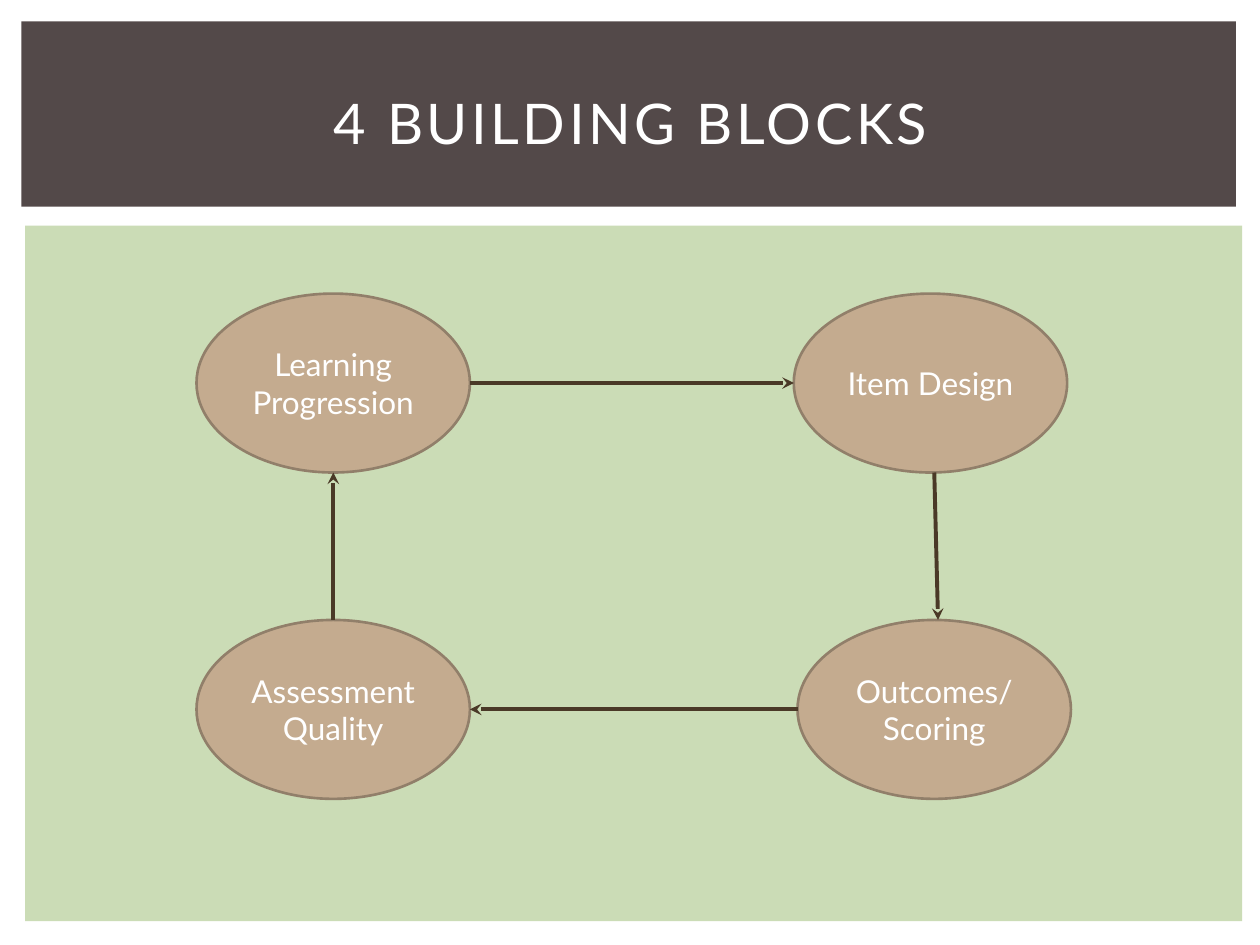
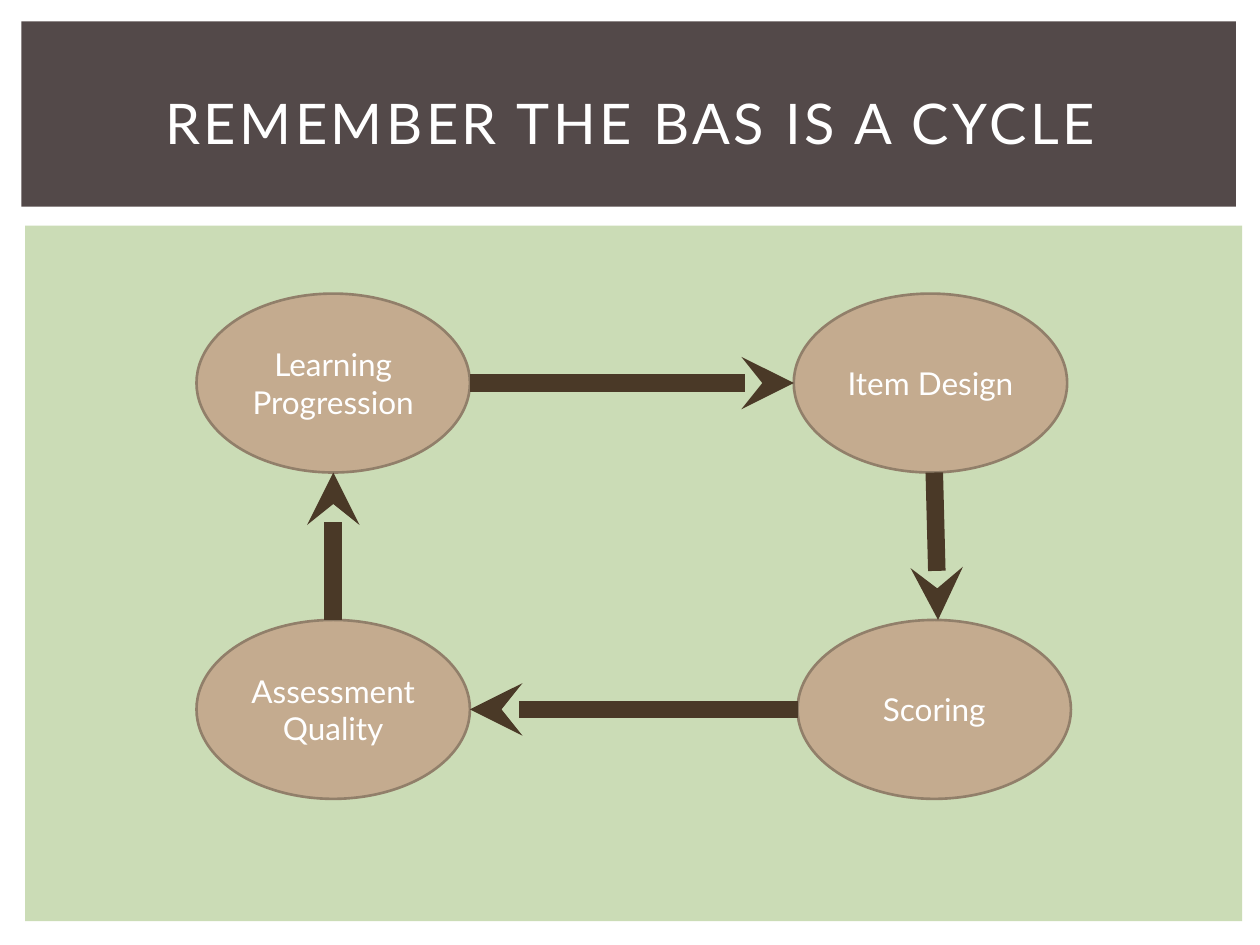
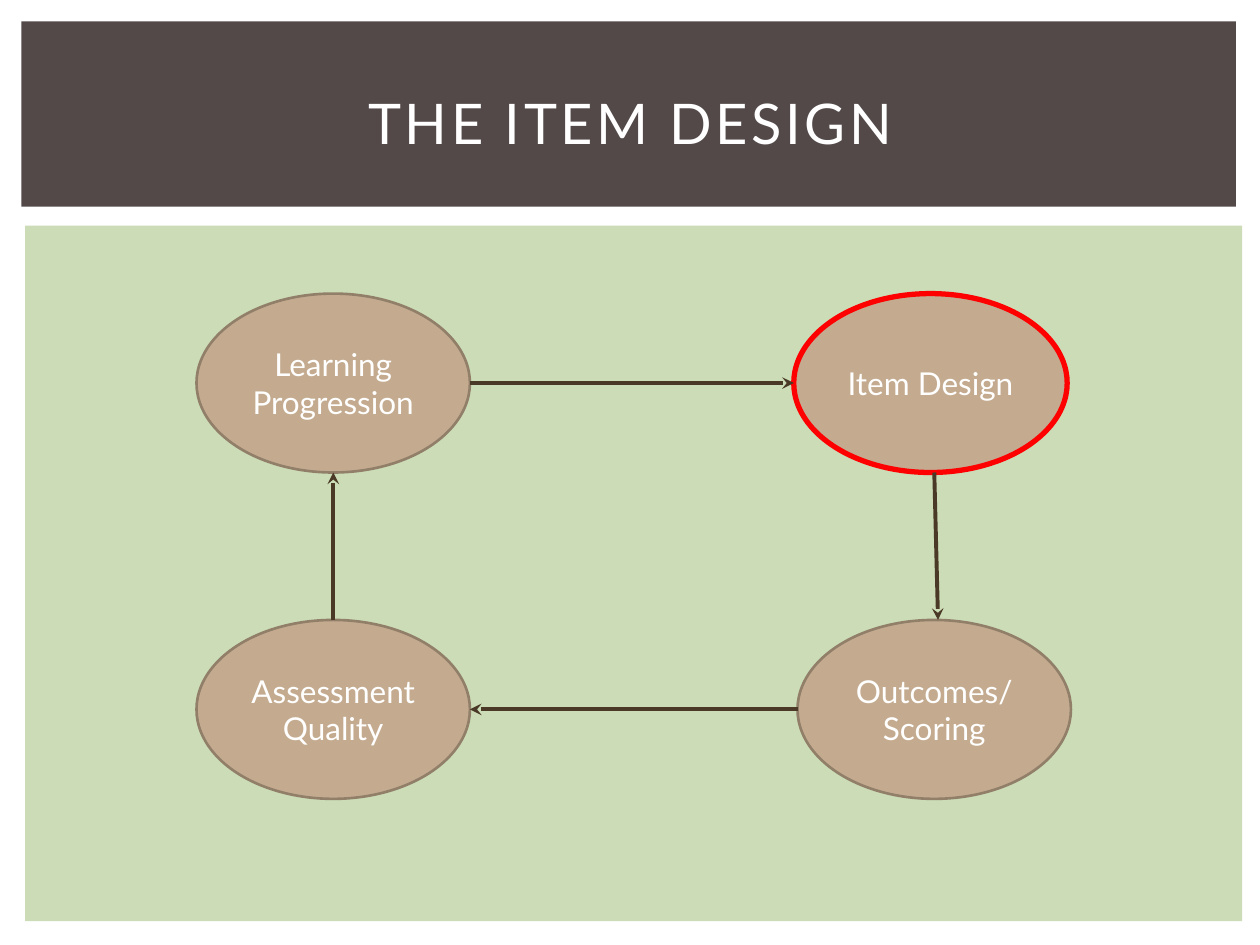
import pptx
import pptx.dml.color
import pptx.enum.shapes
import pptx.enum.text
import pptx.oxml.ns
import pptx.util
from lxml import etree

Inches = pptx.util.Inches
Pt = pptx.util.Pt
Shapes = pptx.enum.shapes.MSO_SHAPE

COLORS = {
    "panel": "CBDCB6",
    "band": "534949",
    "block": "C4AB8F",
    "outline": "917F6A",
    "highlight": "FF0000",
    "arrow": "4A3927",
    "text": "FFFFFF",
}
FONT = "Lato"

# Cycle geometry, in inches
BLOCK_WIDTH, BLOCK_HEIGHT = 2.17, 1.42
LEFT, TOP, BOTTOM = 1.56, 2.33, 4.92
ITEM_LEFT, SCORING_LEFT = 6.3, 6.33
DOWN_ARROW_SHIFT = 0.03


def color(name):
    return pptx.dml.color.RGBColor.from_string(COLORS[name])


class CycleDeck:
    def __init__(self):
        self.deck = pptx.Presentation()
        self.deck.slide_width = Inches(10)
        self.deck.slide_height = Inches(7.5)
        self.page = None

    def add_page(self, title):
        self.page = self.deck.slides.add_slide(self.deck.slide_layouts[6])
        self.shape(Shapes.RECTANGLE, 0.2, 1.79, 9.66, 5.52, "panel")
        self.shape(Shapes.RECTANGLE, 0.17, 0.17, 9.64, 1.47, "band")
        box = self.page.shapes.add_textbox(Inches(0.42), Inches(0.39), Inches(9.17), Inches(1.15))
        span = self.text(box, title, 32)
        span.font._element.set("spc", "200")

    def shape(self, kind, left, top, width, height, fill):
        shape = self.page.shapes.add_shape(
            kind, Inches(left), Inches(top), Inches(width), Inches(height))
        shape.shadow.inherit = False
        shape.fill.solid()
        shape.fill.fore_color.rgb = color(fill)
        shape.line.fill.background()
        return shape

    def text(self, box, words, size):
        frame = box.text_frame
        frame.word_wrap = True
        frame.vertical_anchor = pptx.enum.text.MSO_ANCHOR.MIDDLE
        para = frame.paragraphs[0]
        para.alignment = pptx.enum.text.PP_ALIGN.CENTER
        span = para.add_run()
        span.text = words
        span.font.name = FONT
        span.font.size = Pt(size)
        span.font.color.rgb = color("text")
        return span

    def block(self, words, left, top, highlighted=False):
        oval = self.shape(Shapes.OVAL, left, top, BLOCK_WIDTH, BLOCK_HEIGHT, "block")
        oval.line.color.rgb = color("highlight" if highlighted else "outline")
        oval.line.width = Pt(3 if highlighted else 1.5)
        self.text(oval, words, 18)

    def arrow(self, start, end, weight):
        arrow = self.page.shapes.add_connector(
            pptx.enum.shapes.MSO_CONNECTOR.STRAIGHT, *map(Inches, start + end))
        arrow.line.color.rgb = color("arrow")
        arrow.line.width = Pt(weight)
        qn = pptx.oxml.ns.qn
        etree.SubElement(arrow.line._get_or_add_ln(), qn("a:tailEnd"), type="stealth")
        etree.SubElement(arrow._element.spPr, qn("a:effectLst"))

    def cycle(self, scoring="Outcomes/Scoring", weight=2.25, highlight=None):
        # Blocks, clockwise from the top left
        for words, left, top in (
            ("Learning Progression", LEFT, TOP),
            ("Item Design", ITEM_LEFT, TOP),
            (scoring, SCORING_LEFT, BOTTOM),
            ("Assessment Quality", LEFT, BOTTOM),
        ):
            self.block(words, left, top, words == highlight)

        # Arrows between neighbouring blocks, in the same order
        half_width, half_height = BLOCK_WIDTH / 2, BLOCK_HEIGHT / 2
        right_edge, upper_edge = LEFT + BLOCK_WIDTH, TOP + BLOCK_HEIGHT
        upper_middle, lower_middle = TOP + half_height, BOTTOM + half_height
        down = half_width + DOWN_ARROW_SHIFT
        for start, end in (
            ((right_edge, upper_middle), (ITEM_LEFT, upper_middle)),
            ((ITEM_LEFT + down, upper_edge), (SCORING_LEFT + down, BOTTOM)),
            ((SCORING_LEFT, lower_middle), (right_edge, lower_middle)),
            ((LEFT + half_width, BOTTOM), (LEFT + half_width, upper_edge)),
        ):
            self.arrow(start, end, weight)


def main():
    show = CycleDeck()

    show.add_page("4 BUILDING BLOCKS")
    show.cycle()

    show.add_page("REMEMBER THE BAS IS A CYCLE")
    show.cycle(scoring="Scoring", weight=10)

    show.add_page("THE ITEM DESIGN")
    show.cycle(highlight="Item Design")

    show.deck.save("out.pptx")


if __name__ == "__main__":
    main()
